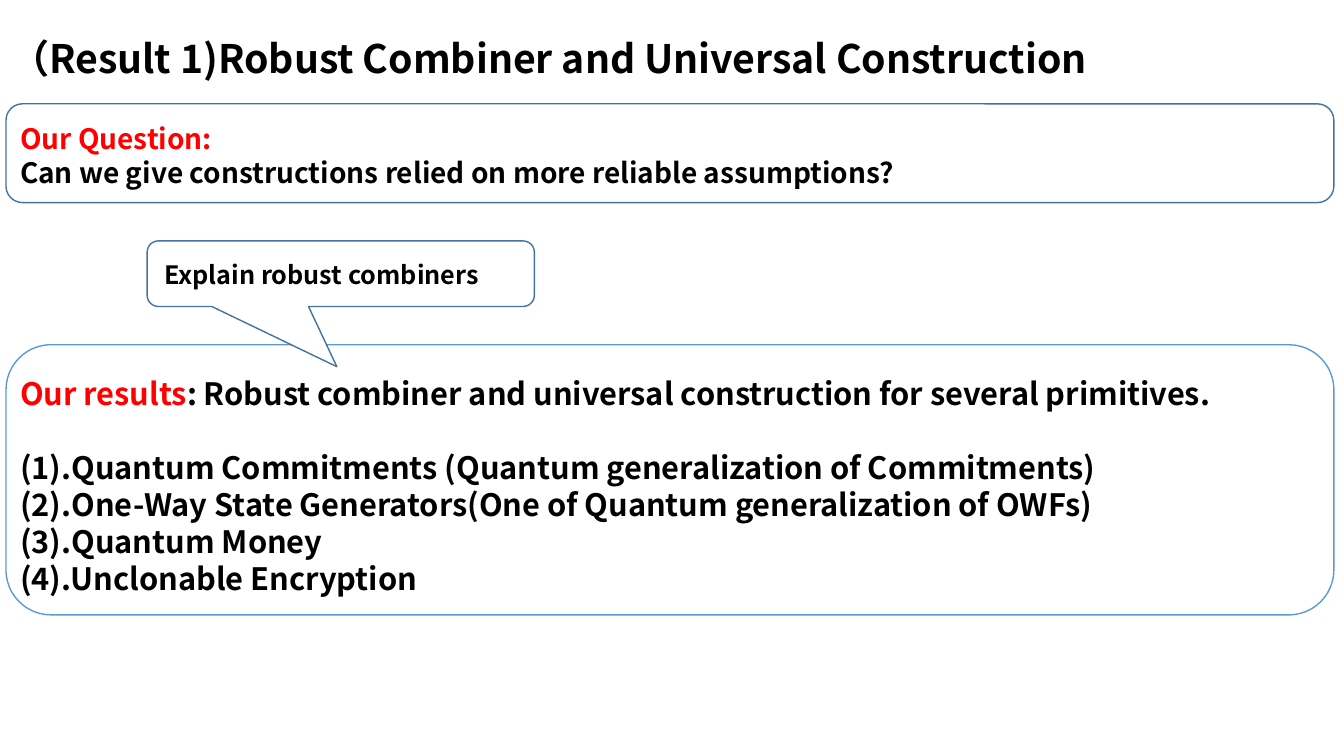
from pptx import Presentation
from pptx.dml.color import RGBColor
from pptx.enum.shapes import MSO_SHAPE
from pptx.enum.text import MSO_ANCHOR, MSO_AUTO_SIZE, PP_ALIGN
from pptx.oxml.ns import qn
from pptx.util import Inches, Pt
from lxml.etree import SubElement

FONT = "Noto Sans CJK JP"
BLACK = RGBColor(0x00, 0x00, 0x00)
RED = RGBColor(0xFF, 0x00, 0x00)
WHITE = RGBColor(0xFF, 0xFF, 0xFF)
BLUE = RGBColor(0x5B, 0x9B, 0xD5)
DARK_BLUE = RGBColor(0x43, 0x73, 0x9E)

RESULTS = [
    "(1).Quantum Commitments (Quantum generalization of Commitments)",
    "(2).One-Way State Generators(One of Quantum generalization of OWFs)",
    "(3).Quantum Money",
    "(4).Unclonable Encryption",
]


def place(box, left, top, width, height):
    box.left, box.top = Inches(left), Inches(top)
    box.width, box.height = Inches(width), Inches(height)


def add_outline(page, kind, left, top, width, height, color, adjustments=()):
    outline = page.shapes.add_shape(
        kind, Inches(left), Inches(top), Inches(width), Inches(height))
    outline.shadow.inherit = False
    outline.fill.solid()
    outline.fill.fore_color.rgb = WHITE
    outline.line.color.rgb = color
    outline.line.width = Pt(1)
    for index, value in enumerate(adjustments):
        outline.adjustments[index] = value
    return outline


def add_span(para, text, size, color):
    span = para.add_run()
    span.text = text
    span.font.name = FONT
    span.font.size = Pt(size)
    span.font.bold = True
    span.font.color.rgb = color
    SubElement(span.font._element, qn("a:ea"), typeface=FONT)


def write(box, paragraphs, size, anchor=MSO_ANCHOR.TOP, spacing=1.0, gaps=None):
    frame = box.text_frame
    frame.word_wrap = True
    frame.auto_size = MSO_AUTO_SIZE.NONE
    frame.vertical_anchor = anchor
    for index, spans in enumerate(paragraphs):
        para = frame.add_paragraph() if index else frame.paragraphs[0]
        properties = para._p.get_or_add_pPr()
        properties.set("marL", "0")
        properties.set("indent", "0")
        SubElement(properties, qn("a:buNone"))
        para.alignment = PP_ALIGN.LEFT
        para.line_spacing = spacing
        para.space_before = Pt((gaps or {}).get(index, 0))
        for text, color in spans:
            add_span(para, text, size, color)


def add_text(page, left, top, width, height, paragraphs, size):
    box = page.shapes.add_textbox(
        Inches(left), Inches(top), Inches(width), Inches(height))
    write(box, paragraphs, size)


def main():
    deck = Presentation()
    deck.slide_width, deck.slide_height = Inches(13.33), Inches(7.5)
    page = deck.slides.add_slide(deck.slide_layouts[1])
    title, results = page.placeholders

    place(title, 0, 0, 13.33, 1.21)
    write(title, [[("（Result 1)Robust Combiner and Universal Construction", BLACK)]],
          28, anchor=MSO_ANCHOR.MIDDLE, spacing=0.9)

    add_outline(page, MSO_SHAPE.ROUNDED_RECTANGLE, 0.06, 1.03, 13.17, 0.98, DARK_BLUE)
    add_text(page, 0.1, 1.16, 9.72, 0.77, [
        [("Our Question:", RED)],
        [("Can we give constructions relied on more reliable assumptions?", BLACK)],
    ], 20)

    results_outline = add_outline(
        page, MSO_SHAPE.ROUNDED_RECTANGLE, 0.06, 3.42, 13.17, 2.68, BLUE)
    results_outline._element.addnext(results._element)
    place(results, 0.1, 3.67, 13.17, 2.32)
    heading = [("Our results", RED),
               (": Robust combiner and universal construction for several primitives.", BLACK)]
    write(results, [heading] + [[(text, BLACK)] for text in RESULTS], 22, gaps={1: 26.4})

    add_outline(page, MSO_SHAPE.ROUNDED_RECTANGULAR_CALLOUT, 1.46, 2.39, 3.84, 0.65,
                DARK_BLUE, adjustments=(-0.01, 1.42, 0.17))
    add_text(page, 1.53, 2.52, 3.83, 0.4, [[("Explain robust combiners", BLACK)]], 18)

    deck.save("out.pptx")


if __name__ == "__main__":
    main()
